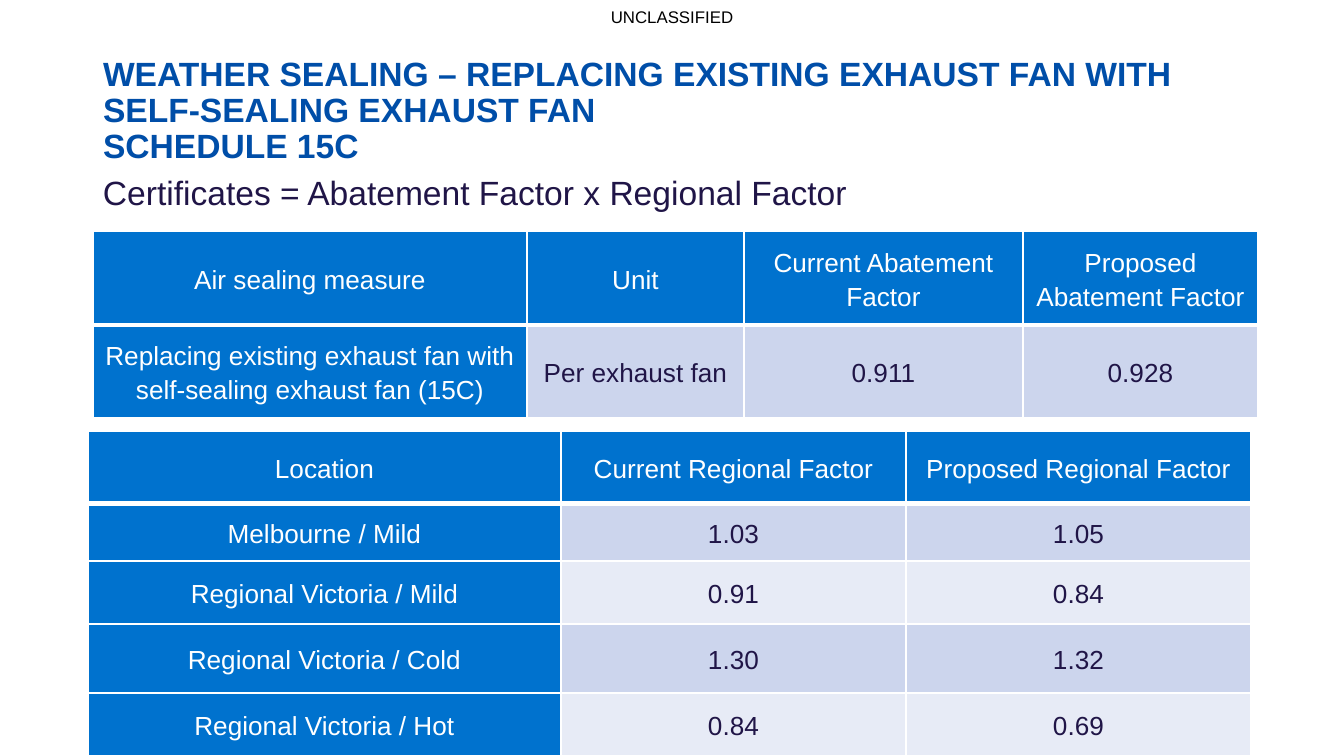
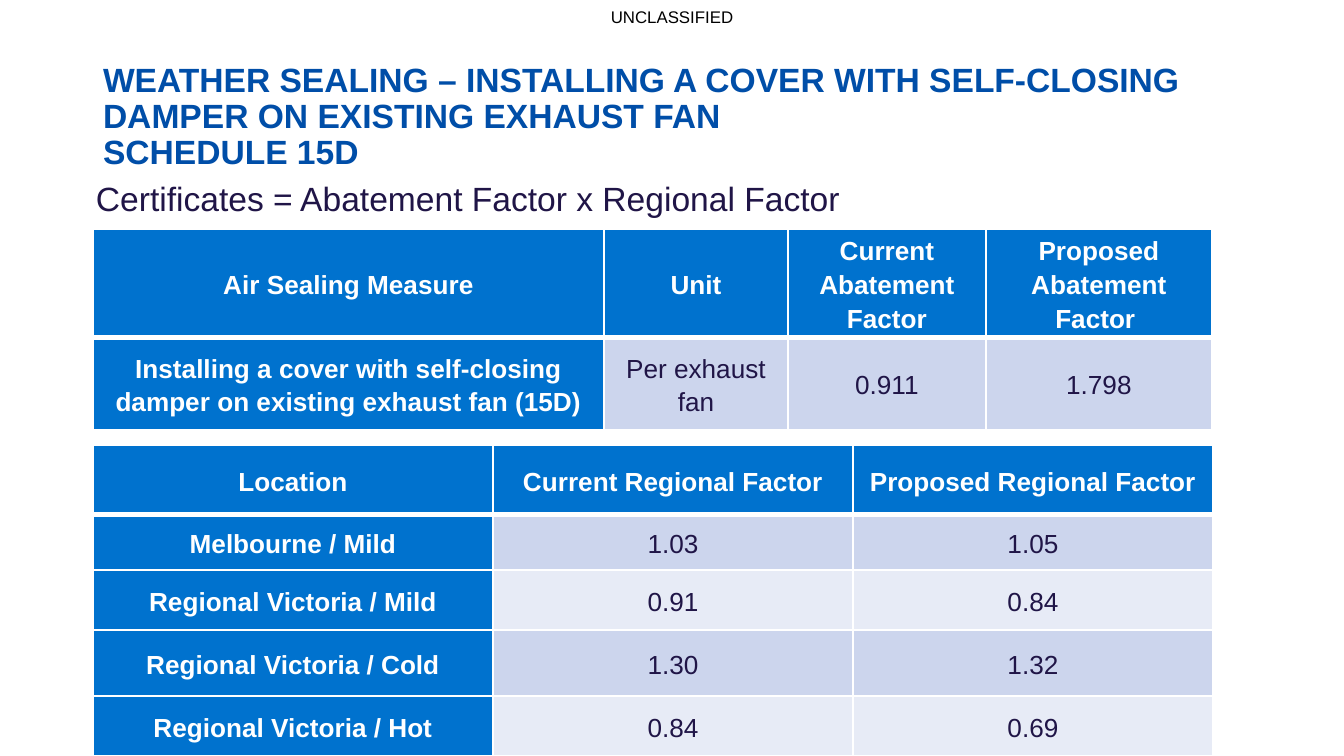
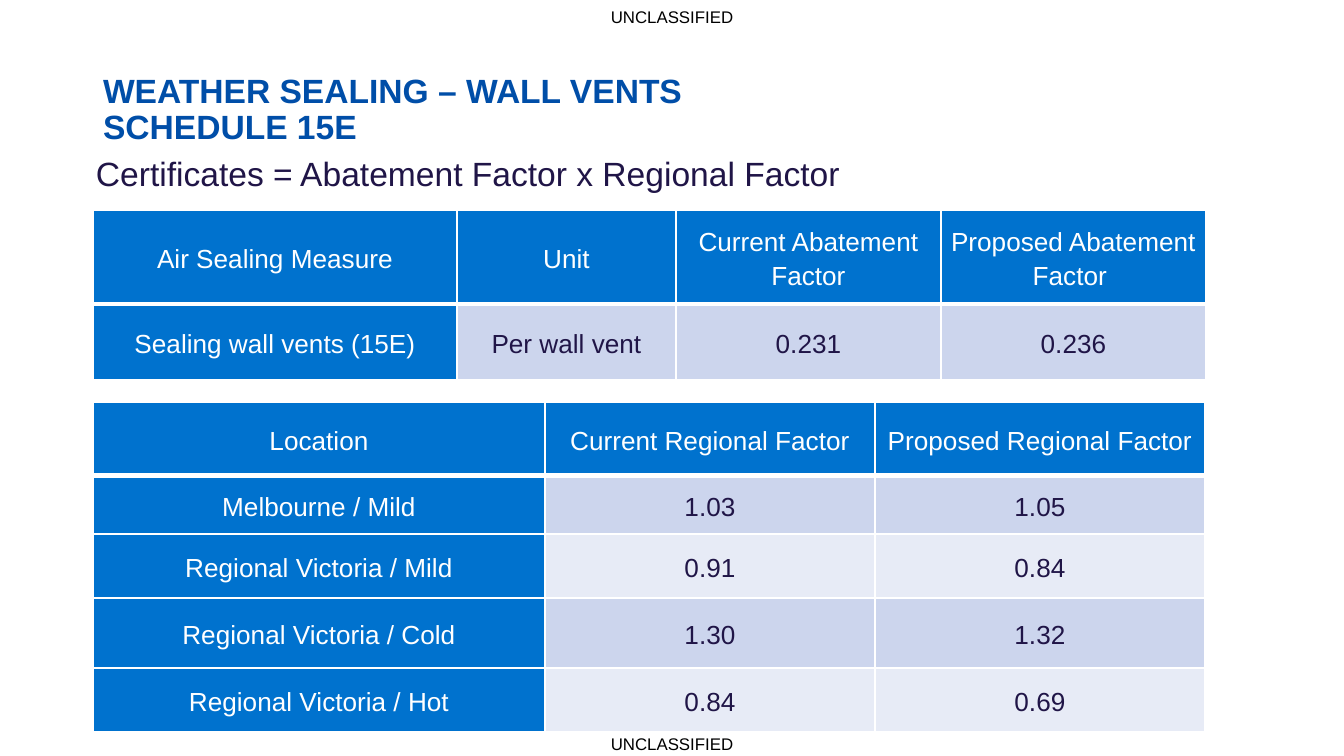
from copy import deepcopy
from dataclasses import dataclass

from lxml.etree import SubElement
from pptx import Presentation
from pptx.dml.color import RGBColor
from pptx.enum.text import MSO_ANCHOR, MSO_AUTO_SIZE, PP_ALIGN
from pptx.oxml.ns import qn
from pptx.util import Emu, Pt


@dataclass(frozen=True)
class Theme:
    font: str = "Arial"
    title: str = "004EA8"
    text: str = "201547"
    mark: str = "000000"
    head: str = "0072CE"
    bands: tuple = ("CCD5ED", "E7EBF6")
    white: str = "FFFFFF"
    big: int = 18
    cell: int = 14
    small: int = 9
    thin: int = 1
    thick: int = 3


THEME = Theme()
WIDE, HIGH = 1344, 756
LEFT = 93
PAD_X, PAD_Y = 10, 5
FORMULA = "Certificates = Abatement Factor x Regional Factor"
FACTORS = ["Current Abatement Factor", "Proposed Abatement Factor "]
REGIONS = [
    ["Location", "Current Regional Factor", "Proposed Regional Factor"],
    ["Melbourne / Mild", "1.03", "1.05"],
    ["Regional Victoria / Mild", "0.91", "0.84"],
    ["Regional Victoria / Cold", "1.30", "1.32"],
    ["Regional Victoria / Hot", "0.84", "0.69"],
]


def px(count):
    return Emu(round(count * 914400 / 134.4))


def style(para, size, color, bold=False):
    for run in para.runs:
        font = run.font
        font.name, font.size, font.bold = THEME.font, Pt(size), bold
        font.color.rgb = RGBColor.from_string(color)


def place(shape, box):
    shape.left, shape.top, shape.width, shape.height = map(px, box)


def inset(frame):
    frame.margin_left = frame.margin_right = px(PAD_X)
    frame.margin_top = frame.margin_bottom = px(PAD_Y)


# Classification line
def add_mark(slide, top):
    frame = slide.shapes.add_textbox(0, px(top), px(WIDE), px(34)).text_frame
    frame.word_wrap = True
    frame.auto_size = MSO_AUTO_SIZE.SHAPE_TO_FIT_TEXT
    frame.text = "UNCLASSIFIED"
    para = frame.paragraphs[0]
    para.alignment = PP_ALIGN.CENTER
    style(para, THEME.small, THEME.mark)


# Slide title
def set_title(slide, text, box):
    title = slide.shapes.title
    place(title, box)
    frame = title.text_frame
    frame.text = text
    frame.auto_size = MSO_AUTO_SIZE.NONE
    frame.vertical_anchor = MSO_ANCHOR.BOTTOM
    inset(frame)
    para = frame.paragraphs[0]
    para.alignment = PP_ALIGN.LEFT
    para.line_spacing = 0.9
    style(para, THEME.big, THEME.title, True)
    # A line break takes the size of the text around it
    for gap in para._p.findall(qn("a:br")):
        gap.append(deepcopy(para.runs[0].font._element))


# Formula under the title
def add_formula(slide, box):
    frame = slide.shapes.add_textbox(*map(px, box)).text_frame
    frame.word_wrap = True
    inset(frame)
    frame.text = FORMULA
    para = frame.paragraphs[0]
    para.line_spacing = 0.9
    style(para, THEME.big, THEME.text)


# Cell borders come before the fill
def set_edges(cell, row):
    props = cell._tc.get_or_add_tcPr()
    top = THEME.thick if row == 1 else THEME.thin
    low = THEME.thick if row == 0 else THEME.thin
    sides = (("L", THEME.thin), ("R", THEME.thin), ("T", top), ("B", low))
    for spot, (side, width) in enumerate(sides):
        line = SubElement(props, qn("a:ln" + side), w=str(Pt(width)))
        fill = SubElement(line, qn("a:solidFill"))
        SubElement(fill, qn("a:srgbClr"), val=THEME.white)
        props.insert(spot, line)


def fill_cell(cell, text, row, col, bold):
    label = row == 0 or col == 0
    tint = THEME.head if label else THEME.bands[(row - 1) % 2]
    cell.fill.solid()
    cell.fill.fore_color.rgb = RGBColor.from_string(tint)
    set_edges(cell, row)
    cell.vertical_anchor = MSO_ANCHOR.MIDDLE
    cell.margin_left = cell.margin_right = px(PAD_X)
    cell.margin_top = cell.margin_bottom = 0
    cell.text_frame.text = text
    para = cell.text_frame.paragraphs[0]
    para.alignment = PP_ALIGN.CENTER
    para.line_spacing = 1.15
    para.space_after = Pt(6)
    style(para, THEME.cell, THEME.white if label else THEME.text,
          bold and label)


# Table with a label row and a label column
def add_grid(slide, data, left, top, cols, rows, bold):
    box = (left, top, sum(cols), sum(rows))
    table = slide.shapes.add_table(len(rows), len(cols),
                                   *map(px, box)).table
    table.horz_banding = False
    for part, size in zip(table.columns, cols):
        part.width = px(size)
    for part, size in zip(table.rows, rows):
        part.height = px(size)
    for row, line in enumerate(data):
        for col, text in enumerate(line):
            fill_cell(table.cell(row, col), text, row, col, bold)


# One schedule slide
def add_page(deck, title, high, body, measure, region, bold=False, foot=False):
    slide = deck.slides.add_slide(deck.slide_layouts[5])
    add_mark(slide, 0)
    if foot:
        add_mark(slide, 727)
    set_title(slide, title, (LEFT, 40, 1159, high))
    left, width = body
    add_formula(slide, (left, 40 + high, width, 46))
    add_grid(slide, bold=bold, **measure)
    add_grid(slide, REGIONS, bold=bold, **region)


def main():
    deck = Presentation()
    deck.slide_width, deck.slide_height = px(WIDE), px(HIGH)
    add_page(
        deck,
        "WEATHER SEALING – REPLACING EXISTING EXHAUST FAN WITH "
        "SELF-SEALING EXHAUST FAN\vSCHEDULE 15C",
        131, (LEFT, 1159),
        dict(data=[["Air sealing measure", "Unit", *FACTORS],
                   ["Replacing existing exhaust fan with "
                    "self-sealing exhaust fan (15C)",
                    "Per exhaust fan", "0.911", "0.928"]],
             left=LEFT, top=231, cols=(434, 217, 279, 235), rows=(94, 93)),
        dict(left=88, top=431, cols=(473, 345, 345),
             rows=(73, 57, 63, 69, 63)))
    add_page(
        deck,
        "WEATHER SEALING – INSTALLING A COVER WITH SELF-CLOSING "
        "DAMPER ON EXISTING EXHAUST FAN\vSCHEDULE 15D",
        137, (86, 1191),
        dict(data=[["Air Sealing Measure", "Unit", *FACTORS],
                   ["Installing a cover with self-closing "
                    "damper on existing exhaust fan (15D)",
                    "Per exhaust fan", "0.911", "1.798"]],
             left=LEFT, top=229, cols=(511, 184, 198, 226), rows=(94, 93)),
        dict(left=LEFT, top=445, cols=(400, 360, 360),
             rows=(70, 55, 60, 66, 60)),
        bold=True)
    add_page(
        deck, "WEATHER SEALING – WALL VENTS\vSCHEDULE 15E",
        112, (86, 1191),
        dict(data=[["Air Sealing Measure", "Unit", *FACTORS],
                   ["Sealing wall vents (15E)",
                    "Per wall vent", "0.231", "0.236"]],
             left=LEFT, top=210, cols=(364, 219, 265, 265), rows=(94, 76)),
        dict(left=LEFT, top=402, cols=(452, 330, 330),
             rows=(74, 58, 64, 70, 64)),
        foot=True)
    deck.save("out.pptx")


if __name__ == "__main__":
    main()
